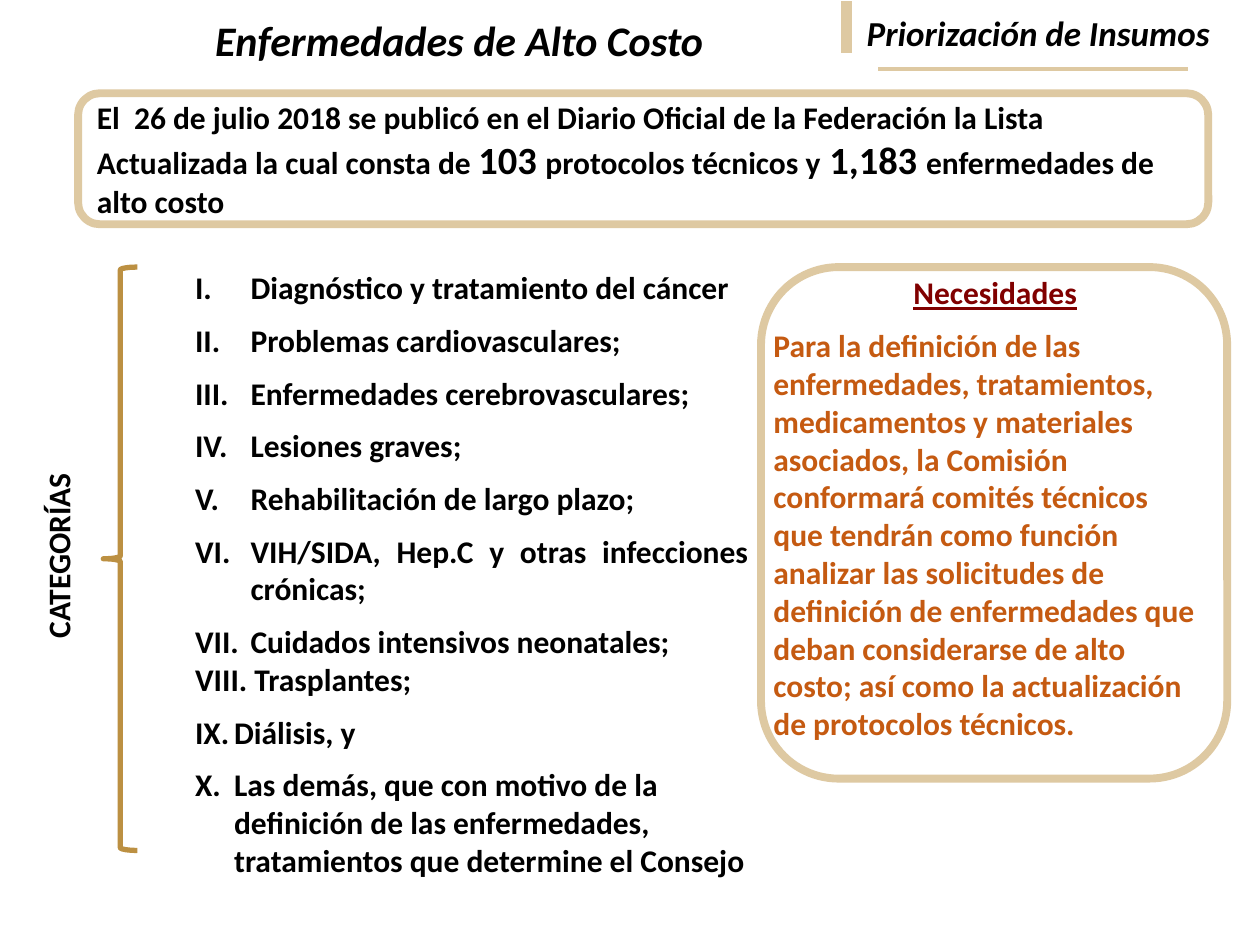
from lxml import etree
from pptx import Presentation
from pptx import util as u
from pptx.dml.color import RGBColor
from pptx.enum import shapes, text
from pptx.oxml import ns

SAND = RGBColor(0xDE, 0xC9, 0xA2)
GOLD = RGBColor(0xBC, 0x90, 0x42)
BLACK = RGBColor(0, 0, 0)
MAROON = RGBColor(0x80, 0, 0)
ORANGE = RGBColor(0xC5, 0x5A, 0x11)


def style(paragraph, size, color=BLACK, italic=None):
    font = paragraph.font
    font.name = "Calibri"
    font.size = u.Pt(size)
    font.bold = True
    font.italic = italic
    font.color.rgb = color


def add_text(box, words="", size=18, color=BLACK, align=None, italic=None):
    area = slide.shapes.add_textbox(*map(u.Inches, box))
    frame = area.text_frame
    frame.word_wrap = True
    frame.auto_size = text.MSO_AUTO_SIZE.SHAPE_TO_FIT_TEXT
    if words:
        frame.text = words
        frame.paragraphs[0].alignment = align
        style(frame.paragraphs[0], size, color, italic)
    return area


prs = Presentation()
prs.slide_width, prs.slide_height = u.Inches(10), u.Inches(7.5)
slide = prs.slides.add_slide(prs.slide_layouts[6])

for ends, width in [((6.72, 0.01, 6.72, 0.42), 6), ((6.97, 0.55, 9.43, 0.55), 2.25)]:
    rule = slide.shapes.add_connector(shapes.MSO_CONNECTOR.STRAIGHT, *map(u.Inches, ends))
    rule.line.color.rgb = SAND
    rule.line.width = u.Pt(width)
    etree.SubElement(rule._element.spPr, ns.qn("a:effectLst"))

categories = [
    ("Diagnóstico y tratamiento del cáncer", 1, 0.64, 0.44),
    ("Problemas cardiovasculares;", 1, 0.64, 0.44),
    ("Enfermedades cerebrovasculares;", 1, 0.64, 0.44),
    ("Lesiones graves;", 1, 0.64, 0.44),
    ("Rehabilitación de largo plazo;", 1, 0.64, 0.44),
    ("VIH/SIDA, Hep.C y otras infecciones crónicas;", 1, 0.64, 0.44),
    ("Cuidados intensivos neonatales;", 1, 0.64, 0.44),
    ("VIII. Trasplantes;", None, 0.5, 0.3),
    ("Diálisis, y", 9, 0.51, 0.31),
    ("Las demás, que con motivo de la definición de las enfermedades, "
     "tratamientos que determine el Consejo", 9, 0.51, 0.31),
]
category_list = add_text((1.25, 2.08, 4.79, 4.98)).text_frame
for i, (words, start, margin, hanging) in enumerate(categories):
    category = category_list.add_paragraph() if i else category_list.paragraphs[0]
    category.text = words
    last = i == len(categories) - 1
    category.alignment = text.PP_ALIGN.LEFT if last else text.PP_ALIGN.JUSTIFY
    if i and start:
        category.space_before = u.Pt(8.5)
    props = category._p.get_or_add_pPr()
    props.set("marL", str(u.Inches(margin)))
    props.set("indent", str(-u.Inches(hanging)))
    if start:
        numeral = etree.SubElement(props, ns.qn("a:buAutoNum"), type="romanUcPeriod")
        if start > 1:
            numeral.set("startAt", str(start))
    style(category, 18)

add_text((6.78, 0.04, 2.97, 0.44), "Priorización de Insumos", 20, italic=True)

outlines = []
for kind, box, color, width in [
    (shapes.MSO_SHAPE.ROUNDED_RECTANGLE, (0.62, 0.74, 8.97, 1.04), SAND, 4.5),
    (shapes.MSO_SHAPE.LEFT_BRACE, (0.82, 2.12, 0.27, 4.63), GOLD, 3),
    (shapes.MSO_SHAPE.ROUNDED_RECTANGLE, (6.04, 2.12, 3.7, 4.06), SAND, 4.5),
]:
    outline = slide.shapes.add_shape(kind, *map(u.Inches, box))
    outline.shadow.inherit = False
    outline.fill.background()
    outline.line.color.rgb = color
    outline.line.width = u.Pt(width)
    outlines.append(outline)

announcement = outlines[0].text_frame
announcement.vertical_anchor = text.MSO_ANCHOR.MIDDLE
sentence = announcement.paragraphs[0]
sentence.alignment = text.PP_ALIGN.LEFT
style(sentence, 18)
for words, size in [
    ("El  26 de julio 2018 se publicó en el Diario Oficial de la Federación "
     "la Lista Actualizada la cual consta de ", 18),
    ("103 ", 22),
    ("protocolos técnicos y", 18),
    (" 1,183 ", 22),
    ("enfermedades de alto costo", 18),
]:
    part = sentence.add_run()
    part.text = words
    part.font.size = u.Pt(size)

side_label = add_text((-1.02, 4.21, 2.96, 0.4), "CATEGORÍAS", align=text.PP_ALIGN.CENTER)
side_label.rotation = 270

add_text((1.5, 0.07, 4.29, 0.5), "Enfermedades de Alto Costo", 24,
         align=text.PP_ALIGN.CENTER, italic=True)
add_text((6.04, 2.54, 3.56, 3.43),
         "Para la definición de las enfermedades, tratamientos, medicamentos y "
         "materiales asociados, la Comisión conformará comités técnicos que tendrán "
         "como función analizar las solicitudes de definición de enfermedades que "
         "deban considerarse de alto costo; así como la actualización de protocolos "
         "técnicos.", color=ORANGE)
needs = add_text((7.15, 2.12, 1.51, 0.4), "Necesidades", color=MAROON)
needs.text_frame.word_wrap = False
needs.text_frame.paragraphs[0].font.underline = True

prs.save("out.pptx")
